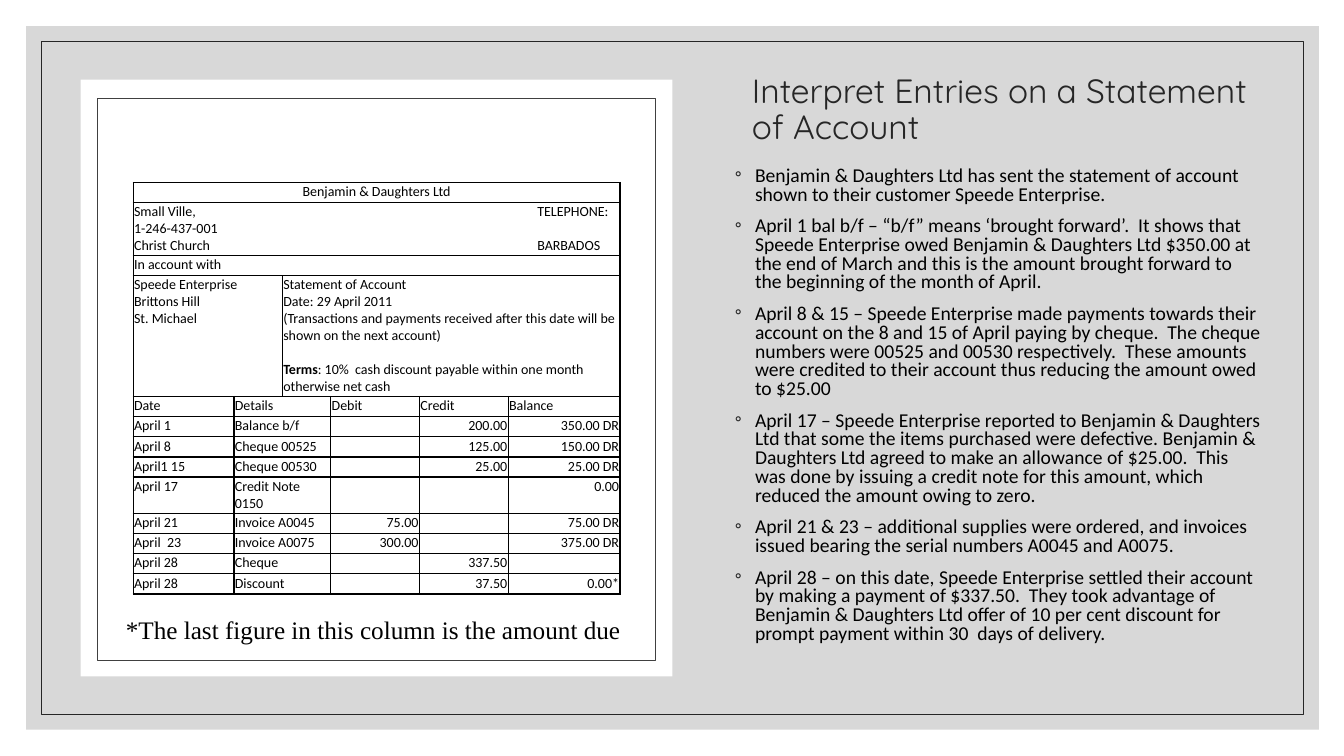
from lxml.etree import SubElement
from pptx import Presentation
from pptx.dml.color import RGBColor
from pptx.enum.shapes import MSO_SHAPE as Preset
from pptx.enum.text import MSO_ANCHOR as Anchor, MSO_AUTO_SIZE as AutoSize, PP_ALIGN as Align
from pptx.oxml.ns import qn
from pptx.util import Pt

PX = 9144
BLACK, WHITE, INK, FRAME = "000000", "FFFFFF", "262626", "404040"
PANEL = "BFBFBF"

COLUMNS = [100, 48, 48, 88, 88, 111]
ROWS = [20, 36, 20, 117, 20, 20, 20, 20, 36, 20, 20, 20, 20]
HEADINGS = ["Date", "Details", "Debit", "Credit", "Balance"]
ENTRIES = [
    ["April 1", "Balance b/f", "", "200.00", "350.00 DR"],
    ["April 8", "Cheque 00525", "", "125.00", "150.00 DR"],
    ["April1 15", "Cheque 00530", "", "25.00", "25.00 DR"],
    ["April 17", "Credit Note 0150", "", "", "0.00"],
    ["April 21", "Invoice A0045", "75.00", "", "75.00 DR"],
    ["April  23", "Invoice A0075", "300.00", "", "375.00 DR"],
    ["April 28", "Cheque", "", "337.50", ""],
    ["April 28", "Discount", "", "37.50", "0.00*"],
]
NOTES = [
    "Benjamin & Daughters Ltd has sent the statement of account shown to their customer "
    "Speede Enterprise.",
    "April 1 bal b/f – “b/f” means ‘brought forward’.  It shows that Speede Enterprise owed "
    "Benjamin & Daughters Ltd $350.00 at the end of March and this is the amount brought "
    "forward to the beginning of the month of April.",
    "April 8 & 15 – Speede Enterprise made payments towards their account on the 8 and 15 of "
    "April paying by cheque.  The cheque numbers were 00525 and 00530 respectively.  These "
    "amounts were credited to their account thus reducing the amount owed to $25.00",
    "April 17 – Speede Enterprise reported to Benjamin & Daughters Ltd that some the items "
    "purchased were defective. Benjamin & Daughters Ltd agreed to make an allowance of $25.00.  "
    "This was done by issuing a credit note for this amount, which reduced the amount owing to "
    "zero.",
    "April 21 & 23 – additional supplies were ordered, and invoices issued bearing the serial "
    "numbers A0045 and A0075.",
    "April 28 – on this date, Speede Enterprise settled their account by making a payment of "
    "$337.50.  They took advantage of Benjamin & Daughters Ltd offer of 10 per cent discount "
    "for prompt payment within 30  days of delivery.",
]


def rgb(color):
    """Turn a hex string into a colour."""
    return RGBColor.from_string(color)


def emu(*lengths):
    """Turn px lengths into EMU."""
    return [length * PX for length in lengths]


def write_text(paragraph, text, size=10, font="Calibri", color=BLACK, bold=False,
               align=Align.LEFT, spacing=None, before=None):
    """Append a formatted run to a paragraph."""
    paragraph.alignment = align
    paragraph.line_spacing = spacing
    if before is not None:
        paragraph.space_before = Pt(before)
    run = paragraph.add_run()
    run.text = text
    run.font.size, run.font.name, run.font.bold = Pt(size), font, bold
    run.font.color.rgb = rgb(color)


def write_lines(frame, lines, **style):
    """Write one paragraph per line and return the paragraphs."""
    for index, line in enumerate(lines):
        paragraph = frame.add_paragraph() if index else frame.paragraphs[0]
        write_text(paragraph, line, **style)
    return frame.paragraphs


def add_rectangle(slide, box, fill=None, line=None, opacity=None):
    """Draw a rectangle with an optional fill and hairline."""
    shape = slide.shapes.add_shape(Preset.RECTANGLE, *emu(*box))
    shape.shadow.inherit = False
    if fill:
        shape.fill.solid()
        shape.fill.fore_color.rgb = rgb(fill)
    else:
        shape.fill.background()
    if line:
        shape.line.color.rgb = rgb(line)
        shape.line.width = Pt(0.5)
    else:
        shape.line.fill.background()
    if opacity:
        color = shape.fill._xPr.find(".//" + qn("a:srgbClr"))
        SubElement(color, qn("a:alpha"), val=str(opacity * 1000))


def add_text_box(slide, box, wrap=True, anchor=Anchor.TOP):
    """Add an empty text box and return its frame."""
    frame = slide.shapes.add_textbox(*emu(*box)).text_frame
    frame.word_wrap, frame.vertical_anchor = wrap, anchor
    frame.auto_size = AutoSize.NONE if wrap else AutoSize.SHAPE_TO_FIT_TEXT
    return frame


def add_bullet(paragraph):
    """Give a paragraph a hanging ring bullet."""
    properties = paragraph._p.get_or_add_pPr()
    properties.set("marL", str(20 * PX))
    properties.set("indent", str(-20 * PX))
    color = SubElement(properties, qn("a:buClr"))
    SubElement(color, qn("a:srgbClr"), val=INK)
    SubElement(properties, qn("a:buFont"), typeface="Calibri")
    SubElement(properties, qn("a:buChar"), char="◦")


def add_tab_stop(paragraph, position):
    """Set a left tab stop at a px position."""
    stops = SubElement(paragraph._p.get_or_add_pPr(), qn("a:tabLst"))
    SubElement(stops, qn("a:tab"), pos=str(position * PX), algn="l")


def style_cell(cell):
    """Clear the fill, tighten the margins and rule all four sides."""
    cell.margin_left = cell.margin_right = cell.margin_top = cell.margin_bottom = PX
    properties = cell._tc.get_or_add_tcPr()
    for side in ("lnL", "lnR", "lnT", "lnB"):
        line = SubElement(properties, qn("a:" + side), w=str(Pt(1)))
        fill = SubElement(line, qn("a:solidFill"))
        SubElement(fill, qn("a:srgbClr"), val=BLACK)
    cell.fill.background()
    cell.text_frame.paragraphs[0].font.size = Pt(10)


def fill_letterhead(table):
    """Write the sender, customer and terms rows."""
    for row in range(3):
        table.cell(row, 0).merge(table.cell(row, 5))
    table.cell(3, 0).merge(table.cell(3, 1))
    table.cell(3, 2).merge(table.cell(3, 5))
    write_lines(table.cell(0, 0).text_frame, ["Benjamin & Daughters Ltd"], align=Align.CENTER)
    address = ["Small Ville,\tTELEPHONE: 1-246-437-001", "Christ Church\tBARBADOS"]
    for paragraph in write_lines(table.cell(1, 0).text_frame, address):
        add_tab_stop(paragraph, 400)
    write_lines(table.cell(2, 0).text_frame, ["In account with"])
    write_lines(table.cell(3, 0).text_frame, ["Speede Enterprise", "Brittons Hill", "St. Michael"])
    statement = table.cell(3, 2).text_frame
    write_lines(statement, [
        "Statement of Account", "Date: 29 April 2011",
        "(Transactions and payments received after this date will be shown on the next account)"])
    terms = statement.add_paragraph()
    write_text(terms, "Terms", bold=True, before=12)
    write_text(terms, ": 10%  cash discount payable within one month otherwise net cash")


def fill_ledger(table):
    """Write the heading row and the dated entries."""
    for row, values in enumerate([HEADINGS] + ENTRIES, start=4):
        table.cell(row, 1).merge(table.cell(row, 2))
        for column, value in zip((0, 1, 3, 4, 5), values):
            amount = row > 4 and column > 2
            if value:
                write_lines(table.cell(row, column).text_frame, [value],
                            align=Align.RIGHT if amount else Align.LEFT)


def add_statement(slide, left, top, width, height):
    """Place the framed statement of account with its caption."""
    add_rectangle(slide, (left, top, width, height), fill=WHITE)
    add_rectangle(slide, (left + 17, top + 19, width - 34, height - 35), line=FRAME)
    box = emu(left + 52, top + 102, sum(COLUMNS), sum(ROWS))
    table = slide.shapes.add_table(len(ROWS), len(COLUMNS), *box).table
    table.first_row = table.horz_banding = False
    for column, size in zip(table.columns, COLUMNS):
        column.width = size * PX
    for row, size in zip(table.rows, ROWS):
        row.height = size * PX
        for cell in row.cells:
            style_cell(cell)
    fill_letterhead(table)
    fill_ledger(table)
    caption = add_text_box(slide, (left + 35, top + 526, 516, 40), wrap=False)
    write_lines(caption, ["*The last figure in this column is the amount due"],
                size=18, font="Times New Roman")


def add_explanation(slide, left, top, width, height):
    """Place the title above the bulleted notes."""
    title = add_text_box(slide, (left + 17, top, width - 18, 102), anchor=Anchor.MIDDLE)
    write_lines(title, ["Interpret Entries on a Statement of Account"],
                size=24, font="Quicksand", color=INK, spacing=0.9)
    notes = add_text_box(slide, (left, top + 102, width - 17, height - 102))
    for paragraph in write_lines(notes, NOTES, size=14, spacing=0.8, before=9):
        add_bullet(paragraph)


def main():
    """Build and save the slide."""
    presentation = Presentation()
    presentation.slide_width, presentation.slide_height = emu(1333, 750)
    slide = presentation.slides.add_slide(presentation.slide_layouts[6])
    add_rectangle(slide, (26, 26, 1282, 698), fill=PANEL, opacity=60)
    add_rectangle(slide, (41, 41, 1252, 668), line=INK)
    add_statement(slide, 80, 79, 587, 592)
    add_explanation(slide, 719, 59, 560, 613)
    presentation.save("out.pptx")


if __name__ == "__main__":
    main()
